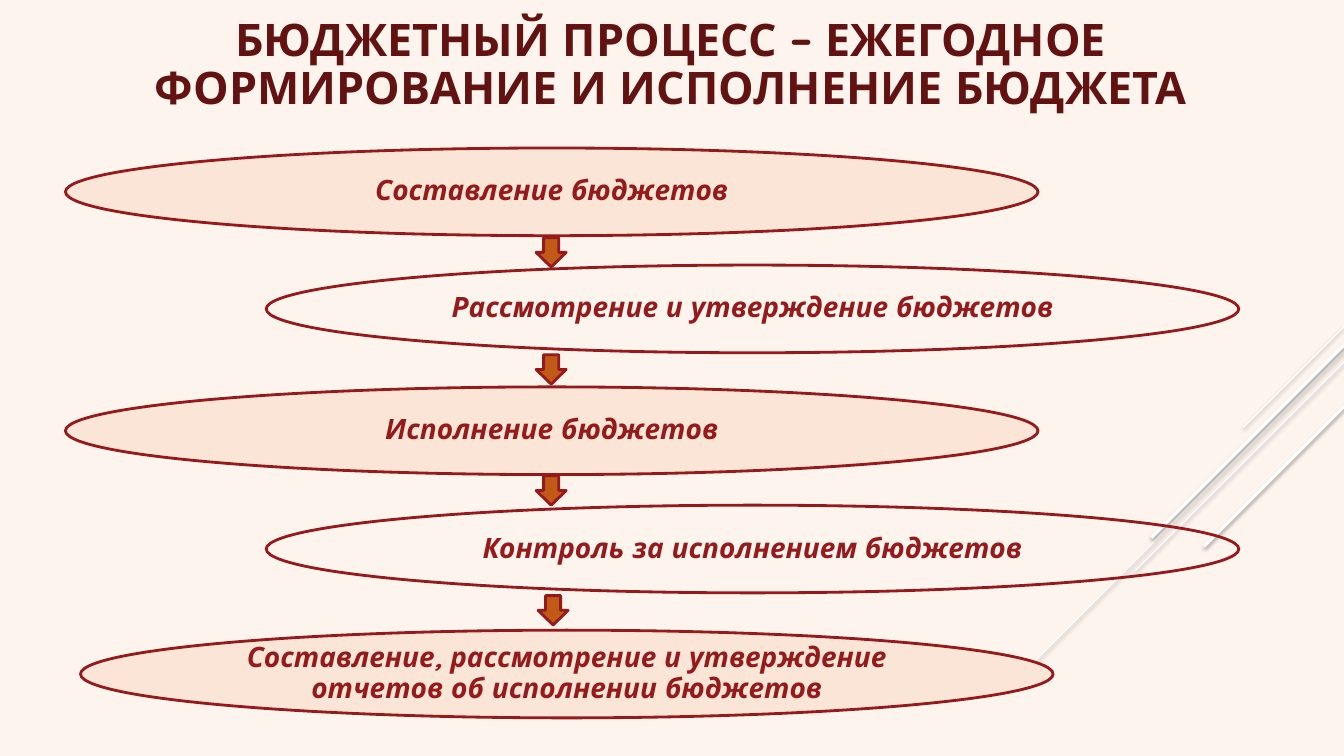
from lxml.etree import SubElement
from pptx import Presentation
from pptx.dml.color import RGBColor
from pptx.enum.shapes import MSO_CONNECTOR, MSO_SHAPE
from pptx.enum.text import MSO_ANCHOR, PP_ALIGN
from pptx.oxml import parse_xml
from pptx.oxml.ns import nsdecls, qn
from pptx.util import Cm, Pt

FONT = "Quicksand"
BACKGROUND = RGBColor(0xFD, 0xF4, 0xEE)
MAROON = RGBColor(0x63, 0x12, 0x12)
RED = RGBColor(0x94, 0x1A, 0x1B)
PEACH = RGBColor(0xFA, 0xE5, 0xD7)
ORANGE = RGBColor(0xC1, 0x5A, 0x16)
WHITE = RGBColor(0xFF, 0xFF, 0xFF)

SLIDE_WIDTH, SLIDE_HEIGHT = 33.87, 19.05
STAGE_WIDTH, STAGE_HEIGHT = 24.51, 2.21
ARROW_WIDTH, ARROW_HEIGHT = 0.76, 0.74

# Text, left, top, fill
STAGES = [
    ("Составление бюджетов", 1.65, 3.73, PEACH),
    ("Рассмотрение и утверждение бюджетов", 6.71, 6.68, None),
    ("Исполнение бюджетов", 1.65, 9.75, PEACH),
    ("Контроль за исполнением бюджетов", 6.71, 12.73, None),
    ("Составление, рассмотрение и утверждение отчетов об исполнении бюджетов",
     2.03, 15.88, PEACH),
]
# Left, top
ARROWS = [(13.51, 5.99), (13.51, 8.94), (13.51, 11.99), (13.56, 15.01)]
# Start height on the right edge, run down to the left, line width
RAYS = [(8.23, 2.54, 0.75), (8.86, 8.28, 0.75), (9.12, 5.26, 0.75),
        (8.69, 4.85, 2.25), (10.24, 3.53, 2.25)]


def add_ray(slide, start, run, width):
    ray = slide.shapes.add_connector(
        MSO_CONNECTOR.STRAIGHT, Cm(SLIDE_WIDTH), Cm(start),
        Cm(SLIDE_WIDTH - run), Cm(start + run))
    ray.line.color.rgb = WHITE
    ray.line.width = Pt(width)
    effects = SubElement(ray._element.spPr, qn("a:effectLst"))
    effects.append(parse_xml(
        f'<a:outerShdw {nsdecls("a")} blurRad="{Pt(3.1)}" dist="{Pt(1.6)}" '
        'dir="5400000" algn="t" rotWithShape="0">'
        '<a:srgbClr val="000000"><a:alpha val="38000"/></a:srgbClr>'
        '</a:outerShdw>'))


def write_text(shape, text, size, color, italic=False):
    frame = shape.text_frame
    frame.word_wrap = True
    frame.vertical_anchor = MSO_ANCHOR.MIDDLE
    paragraph = frame.paragraphs[0]
    paragraph.alignment = PP_ALIGN.CENTER
    paragraph.line_spacing = 0.9
    run = paragraph.add_run()
    run.text = text
    run.font.name = FONT
    run.font.size = Pt(size)
    run.font.bold = True
    run.font.italic = italic
    run.font.color.rgb = color


def add_outlined(slide, kind, left, top, width, height, fill):
    shape = slide.shapes.add_shape(kind, Cm(left), Cm(top), Cm(width), Cm(height))
    shape.shadow.inherit = False
    if fill is None:
        shape.fill.background()
    else:
        shape.fill.solid()
        shape.fill.fore_color.rgb = fill
    shape.line.color.rgb = RED
    shape.line.width = Pt(2)
    return shape


def main():
    deck = Presentation()
    deck.slide_width, deck.slide_height = Cm(SLIDE_WIDTH), Cm(SLIDE_HEIGHT)
    slide = deck.slides.add_slide(deck.slide_layouts[6])
    slide.background.fill.solid()
    slide.background.fill.fore_color.rgb = BACKGROUND

    # Diagonal rays on the right
    for start, run, width in RAYS:
        add_ray(slide, start, run, width)

    # Title
    title = slide.shapes.add_textbox(Cm(2.84), Cm(0.3), Cm(28.14), Cm(2.72))
    write_text(title, "БЮДЖЕТНЫЙ ПРОЦЕСС – ЕЖЕГОДНОЕ ФОРМИРОВАНИЕ И ИСПОЛНЕНИЕ БЮДЖЕТА",
               32, MAROON)

    # Stages of the budget process
    for text, left, top, fill in STAGES:
        stage = add_outlined(slide, MSO_SHAPE.OVAL, left, top,
                             STAGE_WIDTH, STAGE_HEIGHT, fill)
        write_text(stage, text, 20, RED, italic=True)

    # Arrows between the stages
    for left, top in ARROWS:
        add_outlined(slide, MSO_SHAPE.DOWN_ARROW, left, top,
                     ARROW_WIDTH, ARROW_HEIGHT, ORANGE)

    deck.save("out.pptx")


if __name__ == "__main__":
    main()
